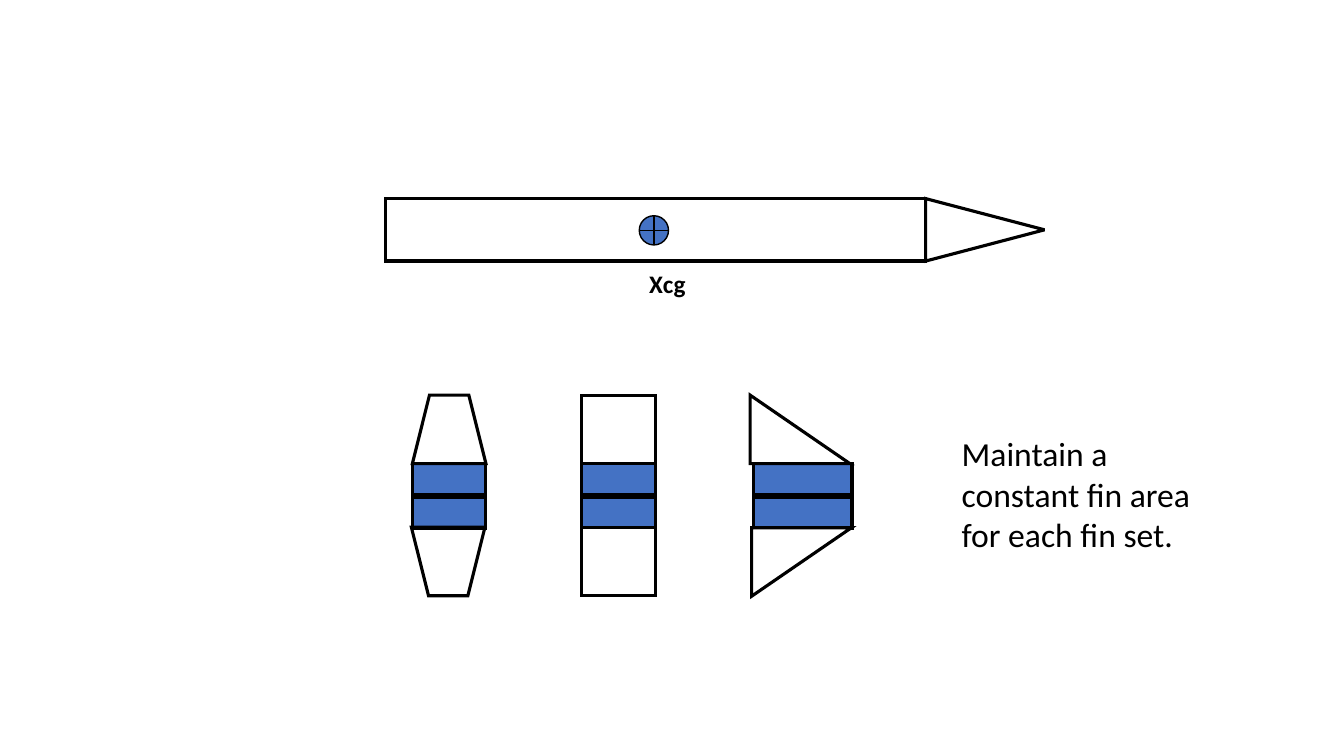
from lxml.etree import SubElement
from pptx import Presentation
from pptx.dml.color import RGBColor
from pptx.enum.shapes import MSO_CONNECTOR, MSO_SHAPE
from pptx.oxml.ns import qn
from pptx.util import Inches, Pt

BLACK, WHITE, BLUE = "000000", "FFFFFF", "4472C4"


def draw(group, kind, left, top, width, height, fill=None, weight=2.25, turn=0):
    part = group.shapes.add_shape(kind, *map(Inches, (left, top, width, height)))
    part.shadow.inherit = False
    part.rotation = turn
    if fill:
        part.fill.solid()
        part.fill.fore_color.rgb = RGBColor.from_string(fill)
    else:
        part.fill.background()
    part.line.color.rgb = RGBColor.from_string(BLACK)
    part.line.width = Pt(weight)
    SubElement(part.line._get_or_add_ln(), qn("a:miter"), lim="800000")
    return part


def write(owner, text, left, top, width, height, size=18, bold=False):
    box = owner.shapes.add_textbox(*map(Inches, (left, top, width, height)))
    box.text_frame.word_wrap = True
    run = box.text_frame.paragraphs[0].add_run()
    run.text = text
    run.font.name = "Calibri"
    run.font.size = Pt(size)
    run.font.bold = bold
    run.font.color.rgb = RGBColor.from_string(BLACK)


deck = Presentation()
deck.slide_width, deck.slide_height = Inches(13.33), Inches(7.5)
slide = deck.slides.add_slide(deck.slide_layouts[6])

# Rocket: body, nose cone and centre of gravity
rocket = slide.shapes.add_group_shape()
draw(rocket, MSO_SHAPE.RECTANGLE, 3.82, 1.97, 5.36, 0.62)
draw(rocket, MSO_SHAPE.ISOSCELES_TRIANGLE, 9.46, 1.69, 0.62, 1.18, turn=90)
draw(rocket, MSO_SHAPE.FLOWCHART_OR, 6.34, 2.14, 0.29, 0.29, fill=BLUE, weight=1)
write(rocket, "Xcg", 6.34, 2.61, 1.03, 0.4, bold=True)

# Fin sets: body left and width, then upper and lower fin as
# (shape, left, top, width, height, fill, turn)
upper, lower, span = 3.92, 5.23, 0.68
fin_sets = [
    (4.09, 0.73, [
        (MSO_SHAPE.TRAPEZOID, 4.09, upper, 0.73, span, None, 0),
        (MSO_SHAPE.TRAPEZOID, 4.08, lower, 0.73, span, None, 180)]),
    (5.77, 0.73, [
        (MSO_SHAPE.RECTANGLE, 5.77, upper, 0.73, span, WHITE, 0),
        (MSO_SHAPE.RECTANGLE, 5.77, lower, 0.73, span, WHITE, 0)]),
    (7.47, 0.98, [
        (MSO_SHAPE.RIGHT_TRIANGLE, 7.44, upper, 0.99, span, WHITE, 0),
        (MSO_SHAPE.RIGHT_TRIANGLE, 7.61, 5.08, span, 0.99, WHITE, 90)]),
]
for left, width, fins in fin_sets:
    fin_set = slide.shapes.add_group_shape()
    body = draw(fin_set, MSO_SHAPE.RECTANGLE, left, 4.6, width, 0.64, fill=BLUE)

    # Centre line across the body
    axis = fin_set.shapes.add_connector(
        MSO_CONNECTOR.STRAIGHT, Inches(left), Inches(4.92),
        Inches(left + width), Inches(4.92))
    axis.begin_connect(body, 1)
    axis.end_connect(body, 3)
    axis.line.color.rgb = RGBColor.from_string(BLACK)
    axis.line.width = Pt(4.5)
    SubElement(axis._element.spPr, qn("a:effectLst"))

    for kind, fin_left, fin_top, fin_width, fin_height, fill, turn in fins:
        draw(fin_set, kind, fin_left, fin_top, fin_width, fin_height,
             fill=fill, turn=turn)

# Remark beside the fin sets
write(slide, "Maintain a constant fin area for each fin set.",
      9.44, 4.25, 2.66, 1.31, size=24)

deck.save("out.pptx")
